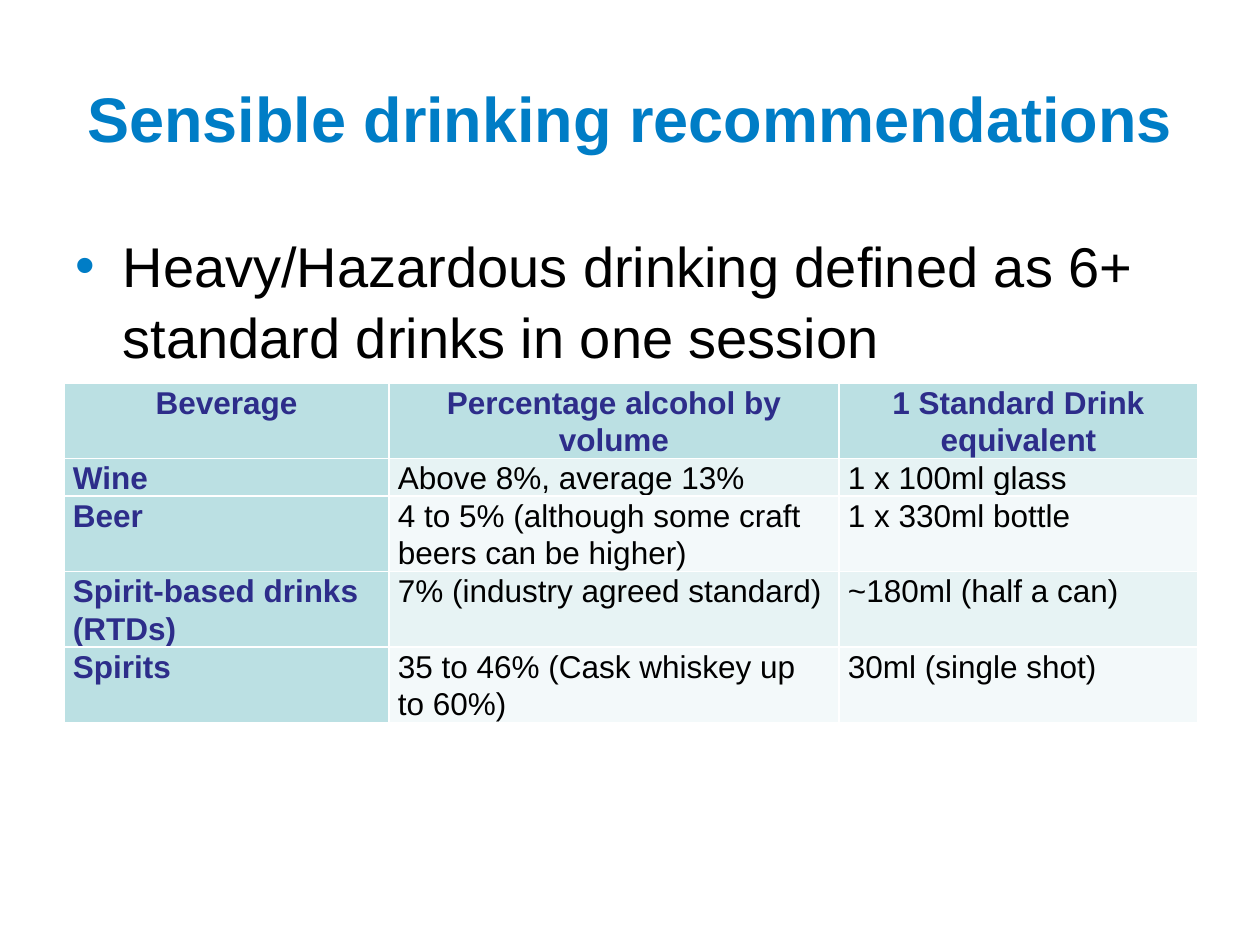
from lxml.etree import SubElement
from pptx import Presentation
from pptx.dml.color import RGBColor
from pptx.enum.text import MSO_ANCHOR, MSO_AUTO_SIZE, PP_ALIGN
from pptx.oxml.ns import qn
from pptx.util import Emu, Pt

SCALE = 914400 / 126
BLUE = RGBColor(0x00, 0x7D, 0xC6)
NAVY = RGBColor(0x2D, 0x2D, 0x8A)
BLACK = RGBColor(0x00, 0x00, 0x00)
TEAL = RGBColor(0xBB, 0xE0, 0xE3)
BANDS = (RGBColor(0xF3, 0xF9, 0xFA), RGBColor(0xE7, 0xF3, 0xF4))

TITLE = {"size": Pt(36), "bold": True, "name": "Arial"}
BODY = {"size": Pt(32), "bold": False, "name": "Arial"}
HEAD = {"size": Pt(18), "bold": True, "name": "Arial"}
CELL = {"size": Pt(18), "bold": False, "name": "Arial"}

COLS = (325, 450, 359)
ROWS = (63, 30, 63, 63, 63)
DRINKS = (
    ("Beverage", "Percentage alcohol by volume", "1 Standard Drink equivalent"),
    ("Wine", "Above 8%, average 13%", "1 x 100ml glass"),
    ("Beer", "4 to 5% (although some craft beers can be higher)", "1 x 330ml bottle"),
    ("Spirit-based drinks (RTDs)", "7% (industry agreed standard)", "~180ml (half a can)"),
    ("Spirits", "35 to 46% (Cask whiskey up to 60%)", "30ml (single shot)"),
)


def px(count):
    return Emu(round(count * SCALE))


def apply(item, form):
    for key, value in form.items():
        setattr(item, key, value)


def place(shape, left, top, width, height):
    apply(shape, {"left": px(left), "top": px(top),
                  "width": px(width), "height": px(height)})


def write(frame, text, font, color, para):
    line = frame.paragraphs[0]
    apply(line, para)
    run = line.add_run()
    run.text = text
    apply(run.font, font)
    run.font.color.rgb = color
    return line


def add_title(slide, text):
    shape = slide.shapes.title
    place(shape, 63, 38, 1134, 158)
    apply(shape.text_frame, {"vertical_anchor": MSO_ANCHOR.MIDDLE,
                             "auto_size": MSO_AUTO_SIZE.NONE})
    write(shape.text_frame, text, TITLE, BLUE, {"alignment": PP_ALIGN.CENTER})


def add_body(slide, text):
    shape = slide.placeholders[1]
    place(shape, 63, 221, 1134, 539)
    shape.text_frame.auto_size = MSO_AUTO_SIZE.NONE
    line = write(shape.text_frame, text, BODY, BLACK,
                 {"space_before": Pt(0), "line_spacing": 1.06})
    props = line._p.get_or_add_pPr()
    props.set("marL", str(px(47)))
    props.set("indent", str(-px(47)))
    color = SubElement(props, qn("a:buClr"))
    SubElement(color, qn("a:srgbClr"), val=str(BLUE))
    SubElement(props, qn("a:buFont"), typeface="Arial")
    SubElement(props, qn("a:buChar"), char="•")


def fill_cell(cell, text, row, col):
    label = row == 0 or col == 0
    apply(cell, {"margin_left": px(9), "margin_right": px(9),
                 "margin_top": 0, "margin_bottom": 0})
    cell.fill.solid()
    cell.fill.fore_color.rgb = TEAL if label else BANDS[row % 2]
    align = PP_ALIGN.LEFT if row else PP_ALIGN.CENTER
    write(cell.text_frame, text, HEAD if label else CELL,
          NAVY if label else BLACK,
          {"alignment": align, "line_spacing": 1.07})


def add_grid(slide, data):
    table = slide.shapes.add_table(
        len(ROWS), len(COLS), px(64), px(383), px(sum(COLS)), px(sum(ROWS))).table
    table.first_col = True
    for col, width in zip(table.columns, COLS):
        col.width = px(width)
    for row, height in zip(table.rows, ROWS):
        row.height = px(height)
    for row, texts in enumerate(data):
        for col, text in enumerate(texts):
            fill_cell(table.cell(row, col), text, row, col)


def main():
    deck = Presentation()
    apply(deck, {"slide_width": px(1260), "slide_height": px(945)})
    slide = deck.slides.add_slide(deck.slide_layouts[1])
    add_title(slide, "Sensible drinking recommendations")
    add_body(slide, "Heavy/Hazardous drinking defined as 6+ "
                    "standard drinks in one session")
    add_grid(slide, DRINKS)
    deck.save("out.pptx")


if __name__ == "__main__":
    main()
